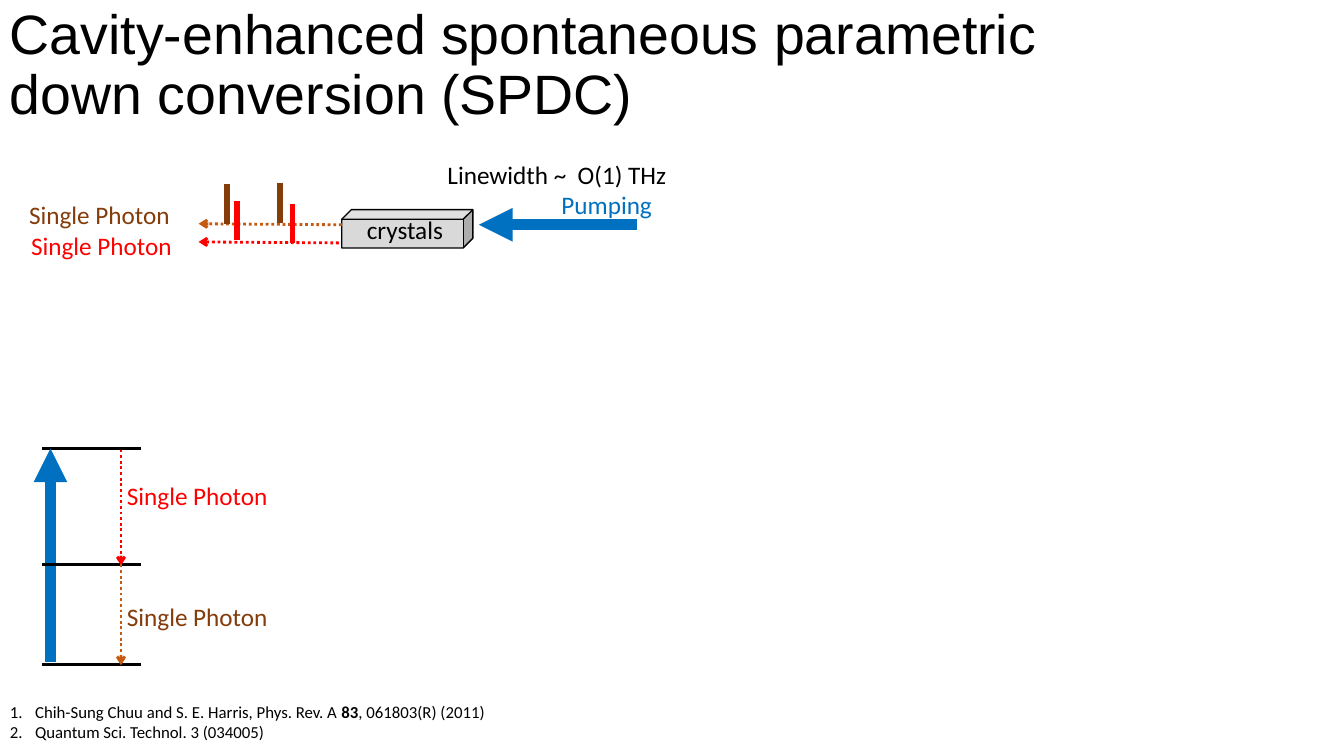
from dataclasses import dataclass

from lxml import etree
from pptx import Presentation
from pptx import util as u
from pptx.dml.color import RGBColor
from pptx.enum import dml, shapes, text
from pptx.oxml.ns import qn

BLACK, RED, BROWN, ORANGE, BLUE, GREY = (
    "000000", "FF0000", "843C0B", "C55A11", "0070C0", "D9D9D9")


@dataclass
class Stroke:
    start: tuple[float, float]
    end: tuple[float, float]
    color: str
    width: float = 2
    dotted: bool = False
    head: str = ""


@dataclass
class Label:
    words: str
    left: float
    top: float
    width: float
    color: str


def rgb(color: str) -> RGBColor:
    return RGBColor.from_string(color)


def pump(start: tuple, end: tuple) -> Stroke:
    return Stroke(start, end, BLUE, 8, head="triangle")


def photon(start: tuple, end: tuple, color: str) -> Stroke:
    return Stroke(start, end, color, dotted=True, head="arrow")


def pulse(x: float, top: float, color: str) -> Stroke:
    return Stroke((x, top), (x, top + 0.39), color, 4)


def level(y: float) -> Stroke:
    return Stroke((0.42, y), (1.4, y), BLACK)


def draw_stroke(slide, stroke: Stroke) -> None:
    ends = [u.Inches(v) for v in (*stroke.start, *stroke.end)]
    connector = slide.shapes.add_connector(shapes.MSO_CONNECTOR.STRAIGHT, *ends)
    connector.line.color.rgb = rgb(stroke.color)
    connector.line.width = u.Pt(stroke.width)
    if stroke.dotted:
        connector.line.dash_style = dml.MSO_LINE.ROUND_DOT
    properties = connector._element.spPr
    if stroke.head:
        outline = properties.find(qn("a:ln"))
        etree.SubElement(outline, qn("a:tailEnd"), type=stroke.head)
    etree.SubElement(properties, qn("a:effectLst"))


def add_text(slide, paragraphs: list, left: float, top: float, width: float,
             height: float, *, size: float = 18, font: str = "Calibri",
             color: str = BLACK, wrap: bool = False, spacing: float = 1.0,
             middle: bool = False, bottom: float = 0.05,
             numbered: bool = False) -> None:
    """Each paragraph is a list of (words, bold) pairs."""
    box = slide.shapes.add_textbox(*map(u.Inches, (left, top, width, height)))
    frame = box.text_frame
    frame.word_wrap = wrap
    frame.margin_bottom = u.Inches(bottom)
    if middle:
        frame.vertical_anchor = text.MSO_ANCHOR.MIDDLE
    if not wrap:
        frame.auto_size = text.MSO_AUTO_SIZE.SHAPE_TO_FIT_TEXT
    for index, runs in enumerate(paragraphs):
        paragraph = frame.add_paragraph() if index else frame.paragraphs[0]
        paragraph.line_spacing = spacing
        if numbered:
            properties = paragraph._p.get_or_add_pPr()
            properties.set("marL", str(u.Inches(0.25)))
            properties.set("indent", str(u.Inches(-0.25)))
            etree.SubElement(properties, qn("a:buAutoNum"), type="arabicPeriod")
        for words, bold in runs:
            run = paragraph.add_run()
            run.text = words
            run.font.name = font
            run.font.size = u.Pt(size)
            run.font.bold = bold
            run.font.color.rgb = rgb(color)


def draw_crystal(slide) -> None:
    crystal = slide.shapes.add_shape(
        shapes.MSO_SHAPE.CUBE, *map(u.Inches, (3.39, 2.08, 1.3, 0.38)))
    crystal.shadow.inherit = False
    crystal.fill.solid()
    crystal.fill.fore_color.rgb = rgb(GREY)
    crystal.line.color.rgb = rgb(BLACK)
    crystal.line.width = u.Pt(1)


STROKES = [
    # Beams through the crystal
    pump((6.32, 2.23), (4.75, 2.23)),
    photon((3.36, 2.41), (1.97, 2.4), RED),
    photon((3.39, 2.23), (1.97, 2.22), ORANGE),
    # Energy levels and transitions
    level(4.45),
    level(6.59),
    pump((0.5, 6.57), (0.5, 4.45)),
    level(5.6),
    photon((1.2, 4.46), (1.2, 5.61), RED),
    photon((1.2, 5.6), (1.2, 6.6), ORANGE),
    # Photon pulses
    pulse(2.25, 1.83, BROWN),
    pulse(2.35, 1.99, RED),
    pulse(2.78, 1.82, BROWN),
    pulse(2.9, 2.02, RED),
]

LABELS = [
    Label("crystals", 3.54, 2.08, 0.96, BLACK),
    Label("Single Photon", 0.21, 2.24, 1.61, RED),
    Label("Single Photon", 0.19, 1.93, 1.61, BROWN),
    Label("Pumping", 5.47, 1.83, 1.11, BLUE),
    Label("Single Photon", 1.16, 4.72, 1.61, RED),
    Label("Single Photon", 1.16, 5.92, 1.61, BROWN),
    Label("Linewidth ~  O(1) THz", 4.34, 1.53, 2.4, BLACK),
]

REFERENCES = [
    [("Chih-Sung Chuu and S. E. Harris, Phys. Rev. A ", False),
     ("83", True), (", 061803(R) (2011)", False)],
    [("Quantum Sci. Technol. 3 (034005)", False)],
]


def main() -> None:
    deck = Presentation()
    deck.slide_width, deck.slide_height = u.Inches(13.33), u.Inches(7.5)
    slide = deck.slides.add_slide(deck.slide_layouts[6])

    # Title, raised by a deep bottom margin
    title = "Cavity-enhanced spontaneous parametric down conversion (SPDC)"
    add_text(slide, [[(title, False)]], 0, 0.23, 11.5, 1.45, size=39.6,
             font="Arial", wrap=True, spacing=0.9, middle=True, bottom=0.64)

    # Diagram
    draw_crystal(slide)
    for stroke in STROKES:
        draw_stroke(slide, stroke)
    for label in LABELS:
        add_text(slide, [[(label.words, False)]], label.left, label.top,
                 label.width, 0.4, color=label.color)

    # References
    add_text(slide, REFERENCES, 0, 6.91, 4.96, 0.5, size=12, numbered=True)

    deck.save("out.pptx")


if __name__ == "__main__":
    main()
